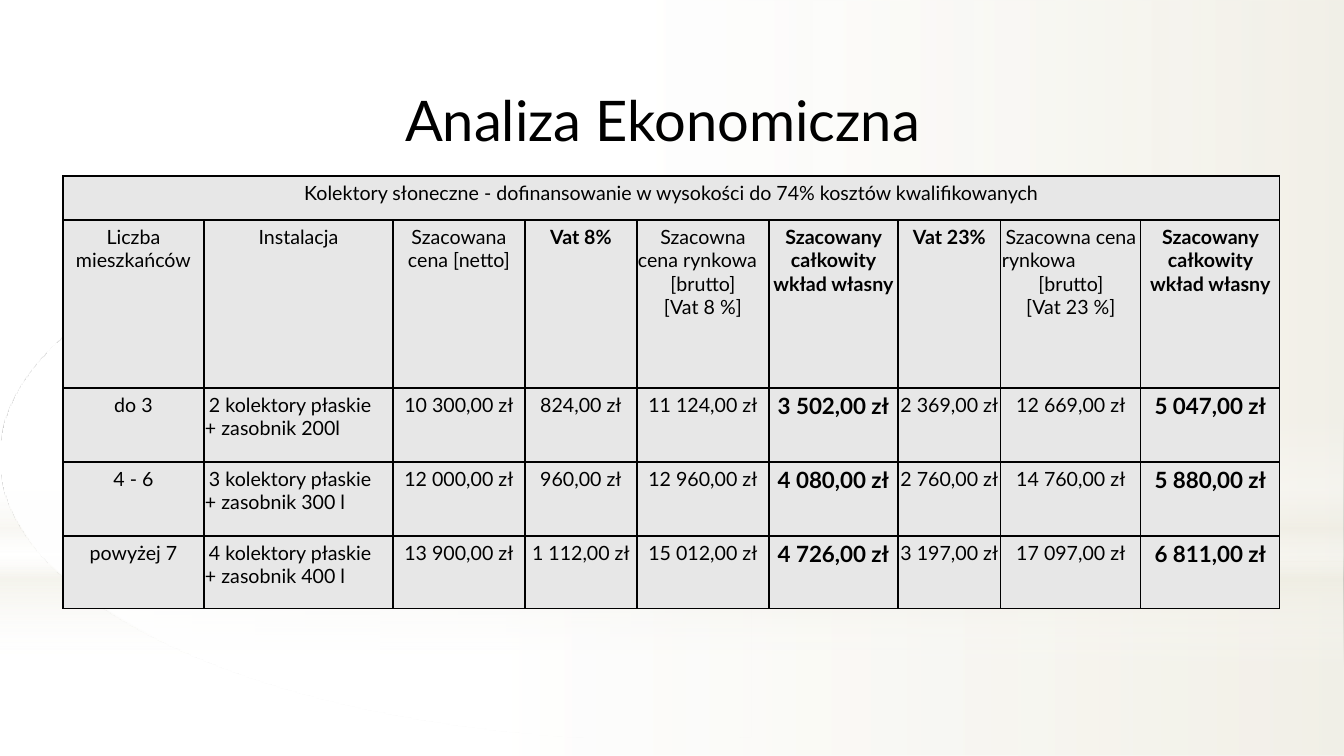
from lxml import etree
from pptx import Presentation
from pptx.dml.color import RGBColor
from pptx.enum.shapes import MSO_SHAPE as Shape
from pptx.enum.text import MSO_ANCHOR as Anchor, MSO_AUTO_SIZE as AutoSize, PP_ALIGN as Align
from pptx.oxml.ns import qn
from pptx.util import Pt

PX = 914400 / 100.8
FONT = "Lato"
BLACK = RGBColor(0x00, 0x00, 0x00)
WHITE = RGBColor(0xFF, 0xFF, 0xFF)
CREAM = RGBColor(0xEE, 0xEC, 0xE1)
GREY = RGBColor(0xE7, 0xE7, 0xE7)

# Backdrop: preset, box, angle, stops (position %, colour, opacity %)
BACKDROP = [
    (Shape.RECTANGLE, (0, 562, 1344, 194), 0,
     [(0, WHITE, 91), (37, WHITE, 76), (100, CREAM, 79)]),
    (Shape.RECTANGLE, (0, 0, 1344, 562), 0,
     [(0, WHITE, 89), (48, WHITE, 62), (100, CREAM, 79)]),
    (Shape.RECTANGLE, (0, 415, 1344, 252), 90,
     [(0, WHITE, 0), (29, WHITE, 30), (45, CREAM, 40), (55, WHITE, 26),
      (65, CREAM, 60), (100, WHITE, 0)]),
    (Shape.OVAL, (0, 176, 1344, 562), 0, [(0, WHITE, 100), (56, WHITE, 0)]),
]

TABLE_TITLE = "Kolektory słoneczne - dofinansowanie w wysokości do 74% kosztów kwalifikowanych"
COLUMNS = [141, 189, 132, 112, 132, 129, 103, 140, 139]
ROWS = [44, 168, 74, 74, 73]
INSTALLATION = 1
OWN_COST = (5, 8)
BOLD_HEADS = (3, 5, 6, 8)

# Each header is a list of (text, alignment) paragraphs
MID, LEFT = Align.CENTER, Align.LEFT
OWN_HEAD = [("Szacowany całkowity wkład własny", MID)]
HEADS = [
    [("Liczba mieszkańców", MID)],
    [("Instalacja", MID)],
    [("Szacowana cena [netto]", MID)],
    [("Vat 8%", MID)],
    [("Szacowna", MID), ("cena rynkowa", LEFT), ("[brutto]", MID), ("[Vat 8 %]", MID)],
    OWN_HEAD,
    [("Vat 23%", MID)],
    [("Szacowna cena", MID), ("rynkowa", LEFT), ("[brutto]", MID), ("[Vat 23 %]", MID)],
    OWN_HEAD,
]
DATA = [
    ["do 3", "2 kolektory płaskie\v+ zasobnik 200l", "10 300,00 zł", "824,00 zł",
     "11 124,00 zł", "3 502,00 zł", "2 369,00 zł", "12 669,00 zł", "5 047,00 zł"],
    ["4 - 6", "3 kolektory płaskie\v+ zasobnik 300 l", "12 000,00 zł", "960,00 zł",
     "12 960,00 zł", "4 080,00 zł", "2 760,00 zł", "14 760,00 zł", "5 880,00 zł"],
    ["powyżej 7", "4 kolektory płaskie\v+ zasobnik 400 l", "13 900,00 zł", "1 112,00 zł",
     "15 012,00 zł", "4 726,00 zł", "3 197,00 zł", "17 097,00 zł", "6 811,00 zł"],
]


def px(length):
    return round(length * PX)


def add_span(para, text, size, bold=False):
    for index, line in enumerate(text.split("\v")):
        if index:
            para.add_line_break()
        span = para.add_run()
        span.text = line
        span.font.name = FONT
        span.font.size = Pt(size)
        span.font.bold = bold
        span.font.color.rgb = BLACK


def set_gradient(shape, stops, angle):
    shape.fill.gradient()
    shape.fill.gradient_angle = 0
    gradient = shape._element.spPr.find(qn("a:gradFill"))
    gradient.find(qn("a:lin")).set("ang", str(angle * 60000))
    stop_list = gradient.find(qn("a:gsLst"))
    for stop in list(stop_list):
        stop_list.remove(stop)
    for position, colour, opacity in stops:
        stop = etree.SubElement(stop_list, qn("a:gs"), pos=str(position * 1000))
        tint = etree.SubElement(stop, qn("a:srgbClr"), val=str(colour))
        etree.SubElement(tint, qn("a:alpha"), val=str(opacity * 1000))


def add_backdrop(page):
    for preset, box, angle, stops in BACKDROP:
        shape = page.shapes.add_shape(preset, *map(px, box))
        shape.shadow.inherit = False
        shape.line.fill.background()
        set_gradient(shape, stops, angle)


def add_title(page, left, top, width, height):
    title = page.shapes.title
    title.left, title.top, title.width, title.height = map(px, (left, top, width, height))
    frame = title.text_frame
    frame.word_wrap = True
    frame.auto_size = AutoSize.NONE
    frame.vertical_anchor = Anchor.MIDDLE
    para = frame.paragraphs[0]
    para.alignment = LEFT
    add_span(para, "Analiza Ekonomiczna", 40)
    # Bring the title in front of the backdrop
    page.shapes._spTree.append(title._element)


def format_cell(cell):
    cell.margin_left = cell.margin_right = px(1)
    cell.margin_top = cell.margin_bottom = px(5)
    cell.vertical_anchor = Anchor.TOP
    properties = cell._tc.get_or_add_tcPr()
    for side in ("lnL", "lnR", "lnT", "lnB"):
        border = etree.SubElement(properties, qn(f"a:{side}"), w=str(Pt(0.96)))
        fill = etree.SubElement(border, qn("a:solidFill"))
        etree.SubElement(fill, qn("a:srgbClr"), val=str(BLACK))
    cell.fill.solid()
    cell.fill.fore_color.rgb = GREY


def fill_cell(cell, lines, size=14, bold=False, indent=0):
    frame = cell.text_frame
    for index, (text, alignment) in enumerate(lines):
        para = frame.add_paragraph() if index else frame.paragraphs[0]
        para.alignment = alignment
        if indent:
            para._p.get_or_add_pPr().set("indent", str(px(indent)))
        add_span(para, text, size, bold)


def add_cost_table(page, left, top):
    box = map(px, (left, top, sum(COLUMNS), sum(ROWS)))
    table = page.shapes.add_table(len(ROWS), len(COLUMNS), *box).table
    table.first_row = table.horz_banding = False
    for column, width in zip(table.columns, COLUMNS):
        column.width = px(width)
    for row, height in zip(table.rows, ROWS):
        row.height = px(height)
    for cell in table.iter_cells():
        format_cell(cell)

    # Heading rows
    table.cell(0, 0).merge(table.cell(0, len(COLUMNS) - 1))
    fill_cell(table.cell(0, 0), [(TABLE_TITLE, MID)])
    for c, lines in enumerate(HEADS):
        fill_cell(table.cell(1, c), lines, bold=c in BOLD_HEADS)

    # Household rows
    for r, values in enumerate(DATA, start=2):
        for c, value in enumerate(values):
            cell = table.cell(r, c)
            if c == INSTALLATION:
                fill_cell(cell, [(value, LEFT)], indent=4)
            elif c in OWN_COST:
                fill_cell(cell, [(value, MID)], size=16, bold=True)
            else:
                fill_cell(cell, [(value, MID)])


def main():
    deck = Presentation()
    deck.slide_width, deck.slide_height = px(1344), px(756)
    page = deck.slides.add_slide(deck.slide_layouts[5])
    page.background.fill.solid()
    page.background.fill.fore_color.rgb = WHITE
    add_backdrop(page)
    add_title(page, 395, 80, 592, 78)
    add_cost_table(page, 63, 176)
    deck.save("out.pptx")


if __name__ == "__main__":
    main()
